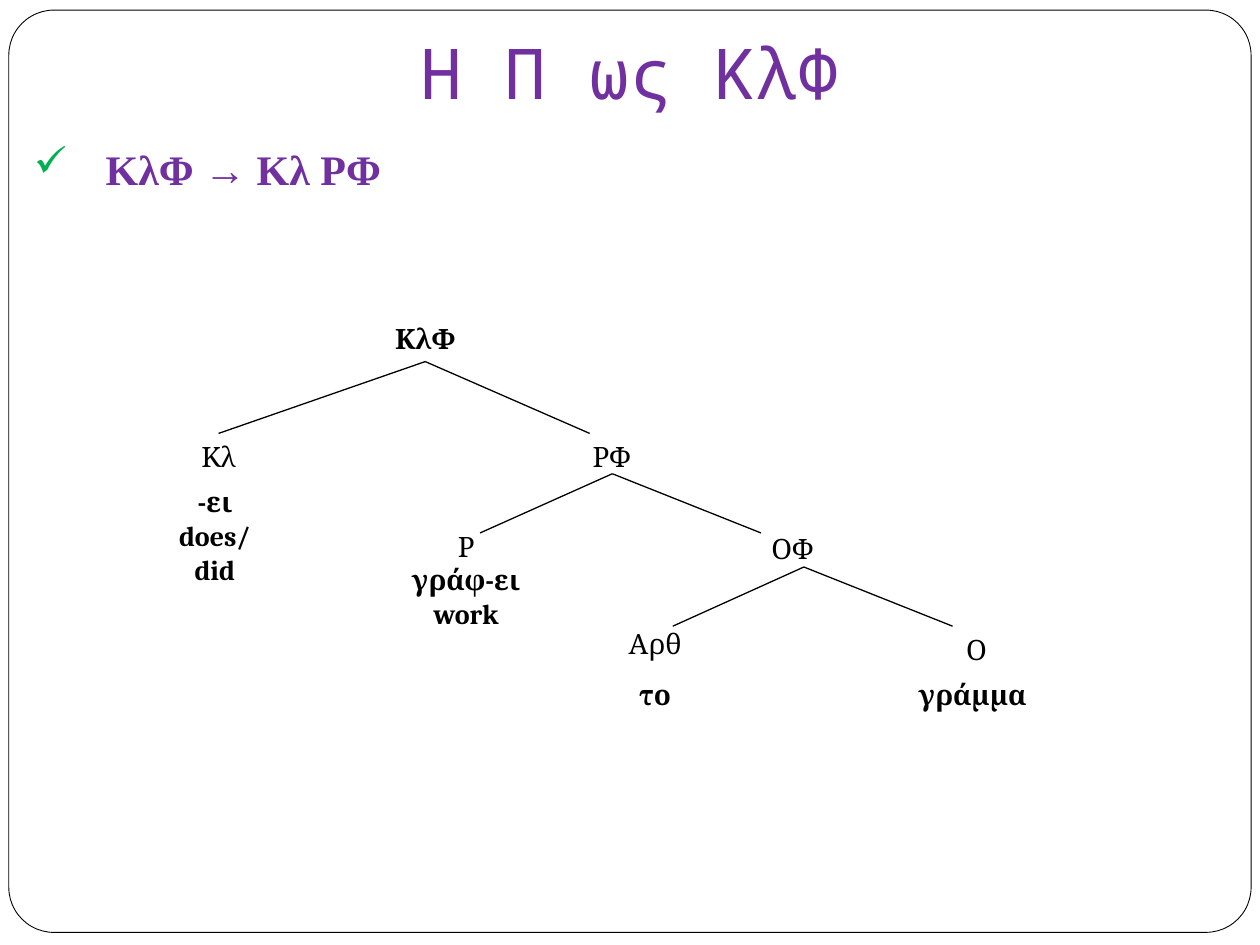
from lxml import etree
from pptx import Presentation
from pptx import util as u
from pptx.dml.color import RGBColor
from pptx.enum import shapes, text
from pptx.oxml.ns import qn

HUES = {"ink": "000000", "paper": "FFFFFF", "head": "7030A0", "tick": "00B050"}
MID = text.PP_ALIGN.CENTER


def hue(name):
    return RGBColor.from_string(HUES[name])


class Deck:
    font, size = "Cambria", 16

    def __init__(self):
        self.prs = Presentation()
        self.prs.slide_width, self.prs.slide_height = u.Inches(10), u.Inches(7.5)
        self.slide = self.prs.slides.add_slide(self.prs.slide_layouts[6])

    def frame(self, *at):
        box = self.slide.shapes.add_shape(
            shapes.MSO_SHAPE.ROUNDED_RECTANGLE, *map(u.Inches, at))
        box.adjustments[0] = 0.049
        box.shadow.inherit = False
        box.fill.solid()
        box.fill.fore_color.rgb = hue("paper")
        box.line.color.rgb = hue("ink")
        box.line.width = u.Pt(0.5)

    def label(self, at, lines, font=None, size=None, color="ink", align=MID):
        """Each line is a pair of its words and whether they are bold."""
        box = self.slide.shapes.add_textbox(*map(u.Inches, at))
        body = box.text_frame
        body.word_wrap = True
        body.auto_size = text.MSO_AUTO_SIZE.SHAPE_TO_FIT_TEXT
        for i, (words, bold) in enumerate(lines):
            par = body.add_paragraph() if i else body.paragraphs[0]
            par.alignment = align
            run = par.add_run()
            run.text = words
            run.font.name = font or self.font
            run.font.size = u.Pt(size or self.size)
            run.font.bold = bold
            run.font.color.rgb = hue(color)
        return box

    def title(self, at, words):
        box = self.label(at, [(words, False)], "Noto Sans Mono", 40, "head")
        body = box.text_frame
        body.auto_size = text.MSO_AUTO_SIZE.NONE
        body.vertical_anchor = text.MSO_ANCHOR.BOTTOM
        body.margin_bottom = u.Inches(0.1)

    def bullet(self, at, words, mark, indent):
        box = self.label(at, [(words, True)], "Times New Roman", 24, "head",
                         text.PP_ALIGN.JUSTIFY)
        props = box.text_frame.paragraphs[0]._p.get_or_add_pPr()
        props.set("marL", str(u.Inches(indent)))
        props.set("indent", str(-u.Inches(indent)))
        tint = etree.SubElement(props, qn("a:buClr"))
        etree.SubElement(tint, qn("a:srgbClr")).set("val", HUES["tick"])
        etree.SubElement(props, qn("a:buChar")).set("char", mark)

    def branch(self, start, end, top=None, low=None):
        """Draw from start to end, joined to the boxes that it meets."""
        line = self.slide.shapes.add_connector(
            shapes.MSO_CONNECTOR.STRAIGHT, *map(u.Inches, start + end))
        line.line.color.rgb = hue("ink")
        line.line.width = u.Pt(0.75)
        etree.SubElement(line._element.spPr, qn("a:effectLst"))
        if top is not None:
            line.begin_connect(top, 2)
        if low is not None:
            line.end_connect(low, 0)


def main():
    deck = Deck()

    # Frame and headings
    deck.frame(0.07, 0.08, 9.86, 7.32)
    deck.title((0.75, -0.25, 8.5, 1.25), "Η Π ως ΚλΦ")
    deck.bullet((0.17, 1.09, 9.83, 0.5), "ΚλΦ → Κλ ΡΦ", "✓", 0.57)

    # Tree nodes and words
    root = deck.label((2.92, 2.5, 0.91, 0.37), [("ΚλΦ", True)])
    left = deck.label((1.36, 3.44, 0.75, 0.37), [("Κλ", False)])
    nodes = [
        ((4.48, 3.44, 0.75, 0.37), [("ΡΦ", False)]),
        ((1.08, 3.8, 1.25, 0.91), [("-ει", True), ("does/", True), ("did", True)]),
        ((2.92, 4.15, 1.56, 0.91), [("Ρ", False), ("γράφ-ει", True), ("work", True)]),
        ((5.51, 4.17, 1.56, 0.37), [("ΟΦ", False)]),
        ((4.42, 4.92, 1.56, 0.37), [("Αρθ", False)]),
        ((4.42, 5.33, 1.56, 0.37), [("το", True)]),
        ((6.97, 4.97, 1.56, 0.37), [("Ο", False)]),
        ((6.94, 5.33, 1.56, 0.37), [("γράμμα", True)]),
    ]
    for at, lines in nodes:
        deck.label(at, lines)

    # Branches
    deck.branch((3.38, 2.87), (1.74, 3.44), root, left)
    deck.branch((3.38, 2.87), (4.68, 3.44), root)
    for fork, ends in [((4.86, 3.76), [(3.81, 4.23), (6.04, 4.23)]),
                       ((6.38, 4.5), [(5.34, 4.97), (7.56, 4.97)])]:
        for end in ends:
            deck.branch(fork, end)

    deck.prs.save("out.pptx")


if __name__ == "__main__":
    main()
